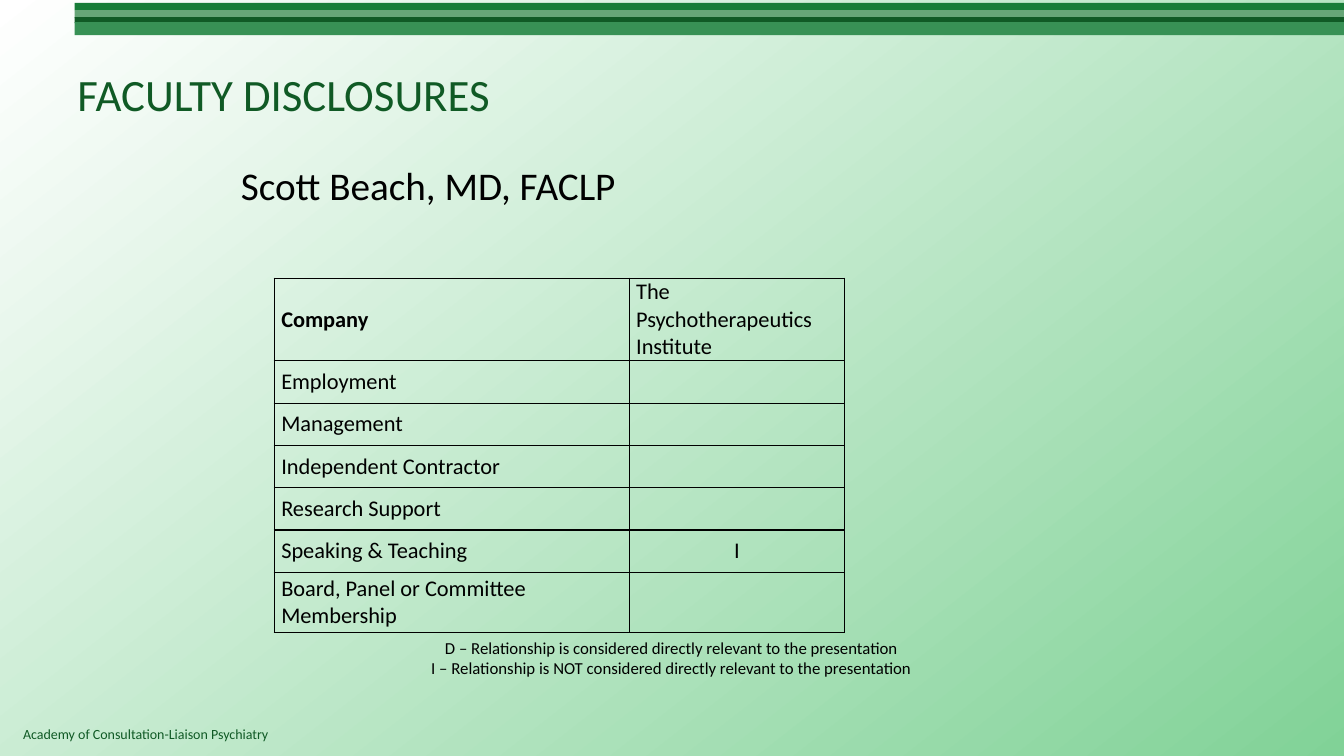
import pptx
import pptx.util
import pptx.dml.color
import pptx.enum.shapes
import pptx.enum.text
import pptx.oxml
import pptx.oxml.ns

Inches = pptx.util.Inches
ALIGN = pptx.enum.text.PP_ALIGN
ANCHOR = pptx.enum.text.MSO_ANCHOR

# Content
COLORS = {
    "black": "000000", "white": "FFFFFF", "pale": "81D297",
    "bar": "177D38", "light": "66A677", "dark": "105A25", "medium": "389155",
}
FONT = "Calibri"
SLIDE_WIDTH, SLIDE_HEIGHT = 13.33, 7.5

BAR_LEFT = 0.74
BARS = [  # top, height, color
    (0.03, 0.07, "bar"),
    (0.10, 0.08, "light"),
    (0.17, 0.06, "dark"),
    (0.22, 0.13, "medium"),
]
TEXTS = [  # box, lines, size, color, alignment, anchor, wrap
    ((0.13, 7.15, 9.25, 0.27), ["Academy of Consultation-Liaison Psychiatry"],
     10, "dark", ALIGN.LEFT, ANCHOR.TOP, True),
    ((0.67, 0.3, 12, 1.25), ["FACULTY DISCLOSURES"],
     32, "dark", ALIGN.LEFT, ANCHOR.MIDDLE, True),
    ((3.35, 6.28, 6.62, 0.5),
     ["D – Relationship is considered directly relevant to the presentation",
      "I – Relationship is NOT considered directly relevant to the presentation"],
     12, "black", ALIGN.CENTER, ANCHOR.TOP, True),
    ((2.29, 1.55, 3.97, 0.57), ["Scott Beach, MD, FACLP"],
     28, "black", ALIGN.LEFT, ANCHOR.TOP, False),
]
DISCLOSURES = [  # row height, label, relationship
    (0.82, "Company", "The Psychotherapeutics Institute"),
    (0.42, "Employment", ""),
    (0.42, "Management", ""),
    (0.42, "Independent Contractor", ""),
    (0.42, "Research Support", ""),
    (0.42, "Speaking & Teaching", "I"),
    (0.60, "Board, Panel or Committee Membership", ""),
]
TABLE_LEFT, TABLE_TOP = 2.72, 2.76
COLUMN_WIDTHS = [3.52, 2.14]


def rgb(name):
    return pptx.dml.color.RGBColor.from_string(COLORS[name])


def style_font(font, size, color, bold=False):
    font.name = FONT
    font.size = pptx.util.Pt(size)
    font.bold = bold
    font.color.rgb = rgb(color)


def add_text(slide, box, lines, size, color, alignment, anchor, wrap):
    frame = slide.shapes.add_textbox(*map(Inches, box)).text_frame
    frame.word_wrap = wrap
    frame.vertical_anchor = anchor
    for index, line in enumerate(lines):
        paragraph = frame.add_paragraph() if index else frame.paragraphs[0]
        paragraph.alignment = alignment
        run = paragraph.add_run()
        run.text = line
        style_font(run.font, size, color)


def add_borders(cell):
    properties = cell._tc.get_or_add_tcPr()
    for side in ("lnL", "lnR", "lnT", "lnB"):
        properties.append(pptx.oxml.parse_xml(
            f'<a:{side} {pptx.oxml.ns.nsdecls("a")} w="12700"><a:solidFill>'
            f'<a:srgbClr val="{COLORS["black"]}"/></a:solidFill></a:{side}>'))


def fill_cell(cell, text, bold, alignment):
    cell.margin_left = cell.margin_right = Inches(0.07)
    cell.margin_top = cell.margin_bottom = 0
    cell.vertical_anchor = ANCHOR.MIDDLE
    add_borders(cell)
    cell.fill.background()
    paragraph = cell.text_frame.paragraphs[0]
    paragraph.alignment = alignment
    if text:
        run = paragraph.add_run()
        run.text = text
        style_font(run.font, 16, "black", bold)


def add_disclosure_table(slide):
    heights = [row[0] for row in DISCLOSURES]
    table = slide.shapes.add_table(
        len(DISCLOSURES), len(COLUMN_WIDTHS), Inches(TABLE_LEFT), Inches(TABLE_TOP),
        Inches(sum(COLUMN_WIDTHS)), Inches(sum(heights))).table
    table.first_row = table.horz_banding = False
    for column, width in zip(table.columns, COLUMN_WIDTHS):
        column.width = Inches(width)
    for index, (height, label, relationship) in enumerate(DISCLOSURES):
        header = index == 0
        table.rows[index].height = Inches(height)
        fill_cell(table.cell(index, 0), label, header, ALIGN.LEFT)
        fill_cell(table.cell(index, 1), relationship, False,
                  ALIGN.LEFT if header else ALIGN.CENTER)


def main():
    presentation = pptx.Presentation()
    presentation.slide_width = Inches(SLIDE_WIDTH)
    presentation.slide_height = Inches(SLIDE_HEIGHT)
    slide = presentation.slides.add_slide(presentation.slide_layouts[6])

    # Background gradient, white at top left
    background = slide.background.fill
    background.gradient()
    background.gradient_angle = 360 - 52
    for stop, color in zip(background.gradient_stops, ("white", "pale")):
        stop.color.rgb = rgb(color)

    # Header bars
    for top, height, color in BARS:
        bar = slide.shapes.add_shape(
            pptx.enum.shapes.MSO_SHAPE.RECTANGLE, Inches(BAR_LEFT), Inches(top),
            Inches(SLIDE_WIDTH - BAR_LEFT), Inches(height))
        bar.shadow.inherit = False
        bar.fill.solid()
        bar.fill.fore_color.rgb = rgb(color)
        bar.line.fill.background()

    # Table, then title, name, legend and footer
    add_disclosure_table(slide)
    for text in TEXTS:
        add_text(slide, *text)

    presentation.save("out.pptx")


if __name__ == "__main__":
    main()
